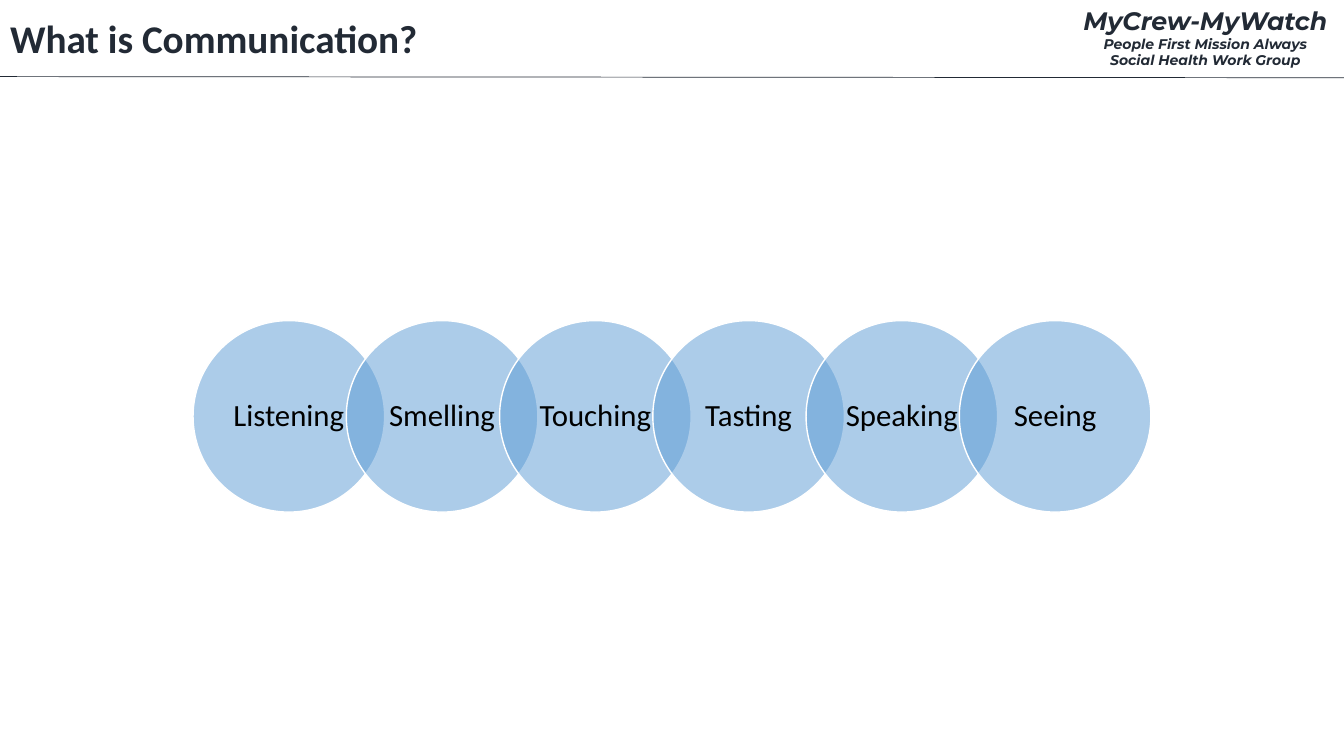
from dataclasses import dataclass

from lxml import etree
from pptx import Presentation
from pptx import util as u
from pptx.dml.color import RGBColor
from pptx.enum import shapes, text
from pptx.oxml.ns import qn


@dataclass(frozen=True)
class Theme:
    ink: str = "222A35"
    circle: str = "5B9BD5"
    rim: str = "FFFFFF"
    label: str = "000000"
    body_font: str = "Calibri"
    brand_font: str = "Montserrat"
    title_size: int = 28
    label_size: int = 22
    brand_size: int = 18
    motto_size: int = 10


CELL = 0.38  # inches per grid column and row
COLS, ROWS = 13.33 / CELL, 7.5 / CELL


def cells(*counts):
    return [u.Inches(count * CELL) for count in counts]


class SlideBuilder:
    def __init__(self, deck, theme):
        self.theme = theme
        self.slide = deck.slides.add_slide(deck.slide_layouts[5])

    def style(self, paragraph, font, size, color, align, **emphasis):
        paragraph.alignment = align
        paragraph.font.name = font
        paragraph.font.size = u.Pt(size)
        paragraph.font.color.rgb = RGBColor.from_string(color)
        for key, value in emphasis.items():
            setattr(paragraph.font, key, value)

    def title(self, wording, left, top, width, height):
        heading = self.slide.shapes.title
        heading.left, heading.top, heading.width, heading.height = cells(left, top, width, height)
        frame = heading.text_frame
        frame.text = wording
        frame.auto_size = text.MSO_AUTO_SIZE.NONE
        frame.vertical_anchor = text.MSO_ANCHOR.TOP
        self.style(frame.paragraphs[0], self.theme.body_font, self.theme.title_size,
                   self.theme.ink, text.PP_ALIGN.LEFT, bold=True)

    def banner(self, lines, left, top, width, height):
        frame = self.slide.shapes.add_textbox(*cells(left, top, width, height)).text_frame
        frame.word_wrap = True
        frame.text = "\n".join(lines)
        for index, paragraph in enumerate(frame.paragraphs):
            size = self.theme.motto_size if index else self.theme.brand_size
            self.style(paragraph, self.theme.brand_font, size, self.theme.ink,
                       text.PP_ALIGN.CENTER, bold=True, italic=True)

    def rule(self, left, top, right, bottom):
        divider = self.slide.shapes.add_connector(
            shapes.MSO_CONNECTOR.STRAIGHT, *cells(left, top, right, bottom))
        divider.line.color.rgb = RGBColor.from_string(self.theme.ink)
        divider.line.width = u.Pt(0.5)
        etree.SubElement(divider.line._get_or_add_ln().getparent(), qn("a:effectLst"))

    def circle(self, wording, left, top, diameter):
        sense = self.slide.shapes.add_shape(
            shapes.MSO_SHAPE.OVAL, *cells(left, top, diameter, diameter))
        sense.shadow.inherit = False
        sense.fill.solid()
        sense.fill.fore_color.rgb = RGBColor.from_string(self.theme.circle)
        tint = sense.fill._xPr.find(qn("a:solidFill"))[0]
        etree.SubElement(tint, qn("a:alpha"), val="50000")
        sense.line.color.rgb = RGBColor.from_string(self.theme.rim)
        sense.line.width = u.Pt(1)
        frame = sense.text_frame
        frame.text = wording
        frame.word_wrap = True
        frame.vertical_anchor = text.MSO_ANCHOR.MIDDLE
        frame.margin_top = frame.margin_bottom = u.Inches(0.03)
        frame.paragraphs[0].line_spacing = 0.9
        self.style(frame.paragraphs[0], self.theme.body_font, self.theme.label_size,
                   self.theme.label, text.PP_ALIGN.CENTER)


def main():
    deck = Presentation()
    deck.slide_width, deck.slide_height = cells(COLS, ROWS)
    builder = SlideBuilder(deck, Theme())

    # Header: group name, title and divider
    banner_width = 7.24
    builder.banner(["MyCrew-MyWatch", "People First Mission Always", "Social Health Work Group"],
                   COLS - banner_width, 0, banner_width, 1.95)
    builder.title("What is Communication?", 0, 0.24, 28.1, 1.5)
    builder.rule(0, 2, COLS, 2.03)

    # Chain of senses: each circle overlaps the next by a fifth
    senses = ["Listening", "Smelling", "Touching", "Tasting", "Speaking", "Seeing"]
    diameter, pitch = 5, 4
    chain_width = pitch * (len(senses) - 1) + diameter
    chain_left = (COLS - chain_width) / 2
    for index, sense in enumerate(senses):
        builder.circle(sense, chain_left + index * pitch, 8.37, diameter)

    deck.save("out.pptx")


if __name__ == "__main__":
    main()
